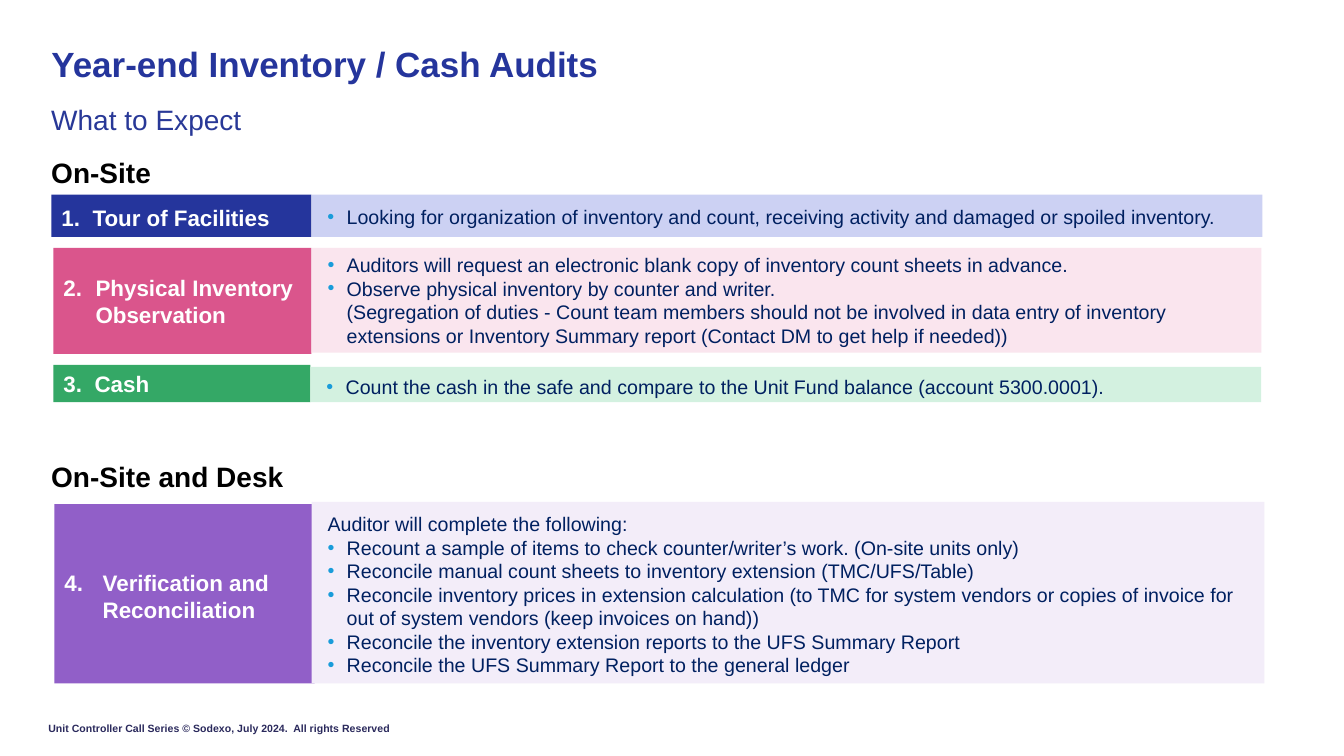
from pptx import Presentation
from pptx.dml.color import RGBColor
from pptx.enum.shapes import MSO_SHAPE as SHAPE
from pptx.enum.text import MSO_ANCHOR as ANCHOR, PP_ALIGN as ALIGN
from pptx.oxml.ns import qn
from pptx.util import Inches, Pt
from lxml.etree import SubElement

WHITE = RGBColor(0xFF, 0xFF, 0xFF)
BLACK = RGBColor(0, 0, 0)
BLUE = RGBColor(0x25, 0x35, 0x9C)
SUBTITLE = RGBColor(0x28, 0x38, 0x97)
FOOTER = RGBColor(0x2A, 0x29, 0x5C)
NAVY = RGBColor(0x00, 0x20, 0x60)
BULLET = RGBColor(0x19, 0x9C, 0xDA)
LIGHT_BLUE = RGBColor(0xCC, 0xD1, 0xF3)
PINK = RGBColor(0xDA, 0x55, 0x8C)
LIGHT_PINK = RGBColor(0xFA, 0xE5, 0xEE)
GREEN = RGBColor(0x34, 0xA8, 0x66)
LIGHT_GREEN = RGBColor(0xD3, 0xF1, 0xE0)
PURPLE = RGBColor(0x91, 0x5F, 0xC8)
LIGHT_PURPLE = RGBColor(0xF3, 0xED, 0xF9)


def write(p, text, size, color, bold=False):
    p.text = text
    p.alignment = ALIGN.LEFT
    for r in p.runs:
        r.font.name = "Arial"
        r.font.size = Pt(size)
        r.font.bold = bold
        r.font.color.rgb = color


def mark(p, left, hang, color, kind, **attrs):
    pPr = p._p.get_or_add_pPr()
    pPr.set("marL", str(Inches(left)))
    pPr.set("indent", str(-Inches(hang)))
    if kind:
        clr = SubElement(pPr, qn("a:buClr"))
        SubElement(clr, qn("a:srgbClr"), val=str(color))
        SubElement(pPr, qn("a:buFont"), typeface="Arial")
        SubElement(pPr, qn(kind), **attrs)


prs = Presentation()
prs.slide_width, prs.slide_height = Inches(13.33), Inches(7.5)
s = prs.slides.add_slide(prs.slide_layouts[5])

title = s.shapes.title
title.left, title.top = Inches(0.51), Inches(0.47)
title.width, title.height = Inches(11.5), Inches(0.38)
tf = title.text_frame
tf.margin_left = tf.margin_right = tf.margin_top = tf.margin_bottom = 0
tf.vertical_anchor = ANCHOR.MIDDLE
write(tf.paragraphs[0], "Year-end Inventory / Cash Audits", 25, BLUE, True)
tf.paragraphs[0].line_spacing = 0.9

texts = [
    ("What to Expect", 0.41, 0.87, 11.5, 0.39, 20, SUBTITLE, False, 1.3),
    ("On-Site", 0.41, 1.49, 1.78, 0.44, 20, BLACK, True, 1),
    ("On-Site and Desk", 0.41, 4.51, 3.44, 0.44, 20, BLACK, True, 1),
    ("Unit Controller Call Series © Sodexo, July 2024.  All rights Reserved",
     0.48, 7.16, 4.5, 0.13, 7.5, FOOTER, True, 1),
]
for text, x, y, w, h, size, color, bold, spacing in texts:
    tf = s.shapes.add_textbox(Inches(x), Inches(y), Inches(w), Inches(h)).text_frame
    tf.word_wrap = True
    write(tf.paragraphs[0], text, size, color, bold)
    tf.paragraphs[0].line_spacing = spacing
    if color == FOOTER:
        tf.margin_left = tf.margin_right = tf.margin_top = tf.margin_bottom = 0
        tf.vertical_anchor = ANCHOR.MIDDLE

TOP, MIDDLE = ANCHOR.TOP, ANCHOR.MIDDLE
steps = [
    ("Tour of Facilities", 0.31, (0.51, 1.93, 2.58, 0.42), BLUE, TOP, 0.1, 0.05,
     (3.09, 1.93, 9.43, 0.42), LIGHT_BLUE, TOP, 0.1,
     ["• Looking for organization of inventory and count, receiving activity and damaged or spoiled inventory."]),
    ("Physical Inventory Observation", 0.32, (0.53, 2.46, 2.56, 1.05), PINK, MIDDLE, 0.05, 0.05,
     (3.09, 2.46, 9.42, 1.04), LIGHT_PINK, TOP, 0.05,
     ["• Auditors will request an electronic blank copy of inventory count sheets in advance.",
      "• Observe physical inventory by counter and writer.",
      "(Segregation of duties - Count team members should not be involved in data entry of inventory "
      "extensions or Inventory Summary report (Contact DM to get help if needed))"]),
    ("Cash", 0.31, (0.53, 3.62, 2.55, 0.37), GREEN, TOP, 0.05, 0.05,
     (3.08, 3.64, 9.43, 0.35), LIGHT_GREEN, MIDDLE, 0.1,
     ["• Count the cash in the safe and compare to the Unit Fund balance (account 5300.0001)."]),
    ("Verification and Reconciliation", 0.38, (0.54, 5, 2.58, 1.78), PURPLE, MIDDLE, 0.1, 0.05,
     (3.09, 4.98, 9.45, 1.8), LIGHT_PURPLE, TOP, 0.1,
     ["Auditor will complete the following:",
      "• Recount a sample of items to check counter/writer’s work. (On-site units only)",
      "• Reconcile manual count sheets to inventory extension (TMC/UFS/Table)",
      "• Reconcile inventory prices in extension calculation (to TMC for system vendors or copies of "
      "invoice for out of system vendors (keep invoices on hand))",
      "• Reconcile the inventory extension reports to the UFS Summary Report",
      "• Reconcile the UFS Summary Report to the general ledger"]),
]
for number, step in enumerate(steps, 1):
    (label, hang, label_box, dark, label_anchor, label_inset, bottom,
     detail_box, light, detail_anchor, detail_inset, lines) = step
    frames = []
    for box, fill, anchor, inset in ((label_box, dark, label_anchor, label_inset),
                                     (detail_box, light, detail_anchor, detail_inset)):
        sp = s.shapes.add_shape(SHAPE.RECTANGLE, *[Inches(v) for v in box])
        sp.shadow.inherit = False
        sp.fill.solid()
        sp.fill.fore_color.rgb = fill
        sp.line.fill.background()
        tf = sp.text_frame
        tf.word_wrap = True
        tf.vertical_anchor = anchor
        tf.margin_left = tf.margin_right = Inches(0.1)
        tf.margin_top, tf.margin_bottom = Inches(inset), Inches(bottom)
        frames.append(tf)

    p = frames[0].paragraphs[0]
    mark(p, hang, hang, WHITE, "a:buAutoNum", type="arabicPeriod", startAt=str(number))
    write(p, label, 16, WHITE, True)

    for i, line in enumerate(lines):
        p = frames[1].paragraphs[0] if i == 0 else frames[1].add_paragraph()
        if line.startswith("• "):
            mark(p, 0.25, 0.19, BULLET, "a:buChar", char="•")
        else:
            mark(p, 0.06 if i == 0 else 0.25, 0, BULLET, None)
        write(p, line.removeprefix("• "), 14, NAVY)

prs.save("out.pptx")
